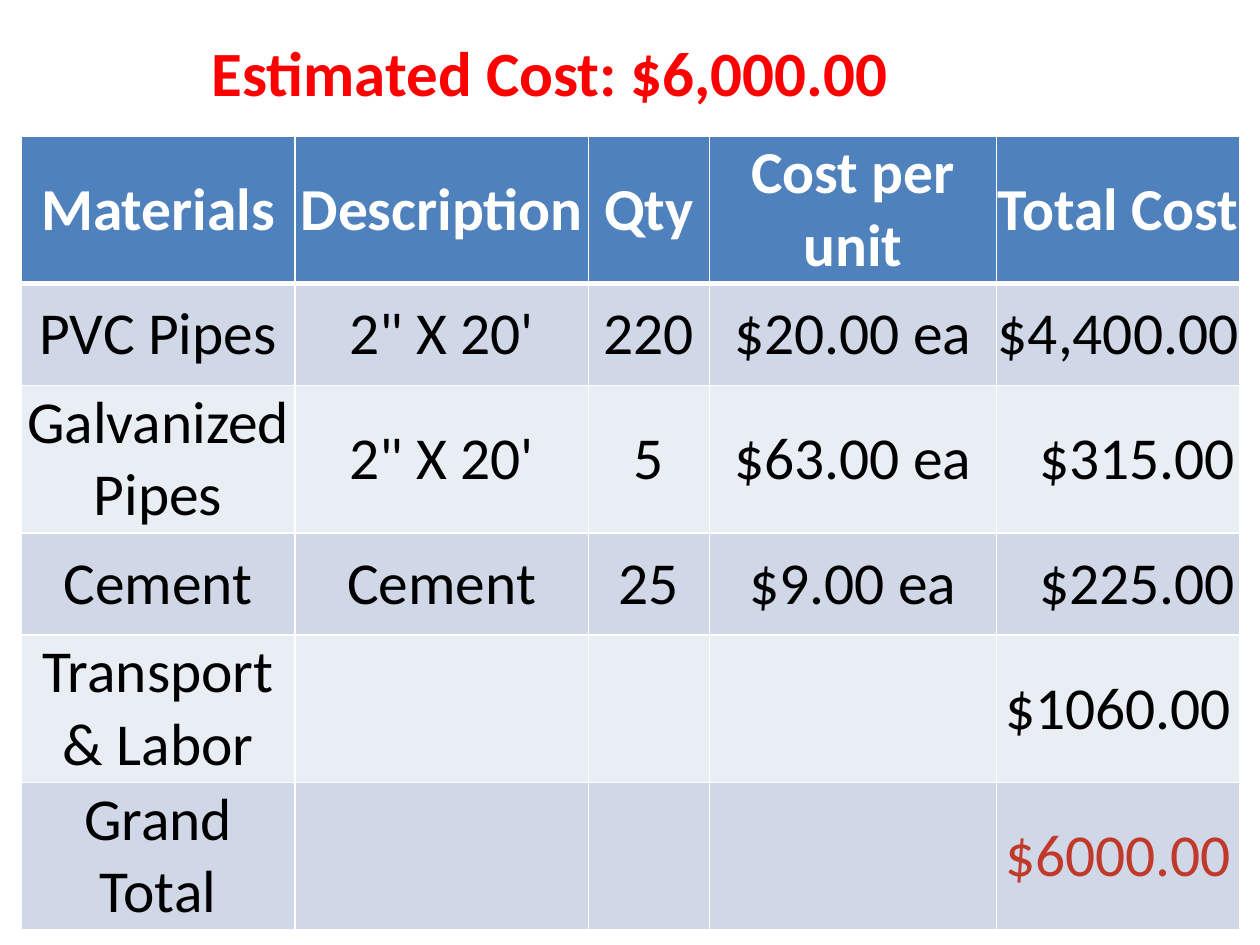
from dataclasses import dataclass

from lxml import etree
from pptx import Presentation
from pptx.dml.color import RGBColor
from pptx.enum.text import MSO_ANCHOR, MSO_AUTO_SIZE, PP_ALIGN
from pptx.oxml.ns import qn
from pptx.util import Inches, Pt

MIDDLE, BOTTOM = MSO_ANCHOR.MIDDLE, MSO_ANCHOR.BOTTOM
LEFT, CENTER, RIGHT = PP_ALIGN.LEFT, PP_ALIGN.CENTER, PP_ALIGN.RIGHT
NO_FIT = MSO_AUTO_SIZE.NONE
TITLE_ONLY = 5


@dataclass(frozen=True)
class Theme:
    font: str = "Calibri"
    title_size: int = 36
    cell_size: int = 34
    title: str = "FF0000"
    head: str = "4F81BD"
    odd: str = "D0D8E8"
    even: str = "E9EDF4"
    white: str = "FFFFFF"
    black: str = "000000"
    total: str = "C0392B"


THEME = Theme()
COLS = [2.17, 2.33, 0.96, 2.28, 1.93]
ROW = 0.81
COSTS = [
    ["Materials", "Description", "Qty", "Cost per unit", "Total Cost"],
    ["PVC Pipes", "2\" X 20'", "220", "$20.00 ea", "$4,400.00"],
    ["Galvanized Pipes", "2\" X 20'", "5", "$63.00 ea", "$315.00"],
    ["Cement", "Cement", "25", "$9.00 ea", "$225.00"],
    ["Transport & Labor", "", "", "", "$1060.00"],
    ["Grand Total", "", "", "", "$6000.00"],
]
RIGHT_CELLS = {(2, 4), (3, 4)}


def apply(item, values):
    for name, value in values.items():
        setattr(item, name, value)


def style(para, size, color, bold, align):
    para.alignment = align
    apply(para.font, {"name": THEME.font, "size": Pt(size), "bold": bold})
    para.font.color.rgb = RGBColor.from_string(color)


def add_title(slide, text):
    title = slide.shapes.title
    apply(title, {"left": Inches(1.58), "top": Inches(0.5),
                  "width": Inches(6.08), "height": Inches(0.42)})
    frame = title.text_frame
    apply(frame, {"text": text, "vertical_anchor": BOTTOM,
                  "auto_size": NO_FIT, "word_wrap": True})
    style(frame.paragraphs[0], THEME.title_size, THEME.title, True, LEFT)


def set_edges(cell, widths):
    """Draw white cell edges; they must come before the fill in tcPr."""
    props = cell._tc.get_or_add_tcPr()
    for place, (side, width) in enumerate(widths.items()):
        line = etree.Element(qn(f"a:ln{side}"), w=str(Pt(width)))
        fill = etree.SubElement(line, qn("a:solidFill"))
        etree.SubElement(fill, qn("a:srgbClr"), val=THEME.white)
        props.insert(place, line)


def fill_cell(cell, text, row, col):
    head = row == 0
    back = THEME.head if head else THEME.odd if row % 2 else THEME.even
    cell.fill.solid()
    cell.fill.fore_color.rgb = RGBColor.from_string(back)
    set_edges(cell, {"L": 1, "R": 1, "T": 3 if row == 1 else 1,
                     "B": 3 if head else 1})
    if not text:
        return
    right = (row, col) in RIGHT_CELLS
    thin = Inches(0.01)
    apply(cell, {"text": text, "vertical_anchor": MIDDLE,
                 "margin_left": thin, "margin_top": thin, "margin_bottom": thin,
                 "margin_right": Inches(0.04) if right else thin})
    last = (row, col) == (len(COSTS) - 1, len(COLS) - 1)
    color = THEME.white if head else THEME.total if last else THEME.black
    style(cell.text_frame.paragraphs[0], THEME.cell_size, color, head,
          RIGHT if right else CENTER)


def add_costs(slide):
    table = slide.shapes.add_table(
        len(COSTS), len(COLS), Inches(0.17), Inches(1.08),
        Inches(sum(COLS)), Inches(ROW * len(COSTS))).table
    for column, width in zip(table.columns, COLS):
        column.width = Inches(width)
    for row, texts in enumerate(COSTS):
        for col, text in enumerate(texts):
            fill_cell(table.cell(row, col), text, row, col)


def main():
    deck = Presentation()
    apply(deck, {"slide_width": Inches(10), "slide_height": Inches(7.5)})
    slide = deck.slides.add_slide(deck.slide_layouts[TITLE_ONLY])
    add_title(slide, "Estimated Cost: $6,000.00")
    add_costs(slide)
    deck.save("out.pptx")


if __name__ == "__main__":
    main()
